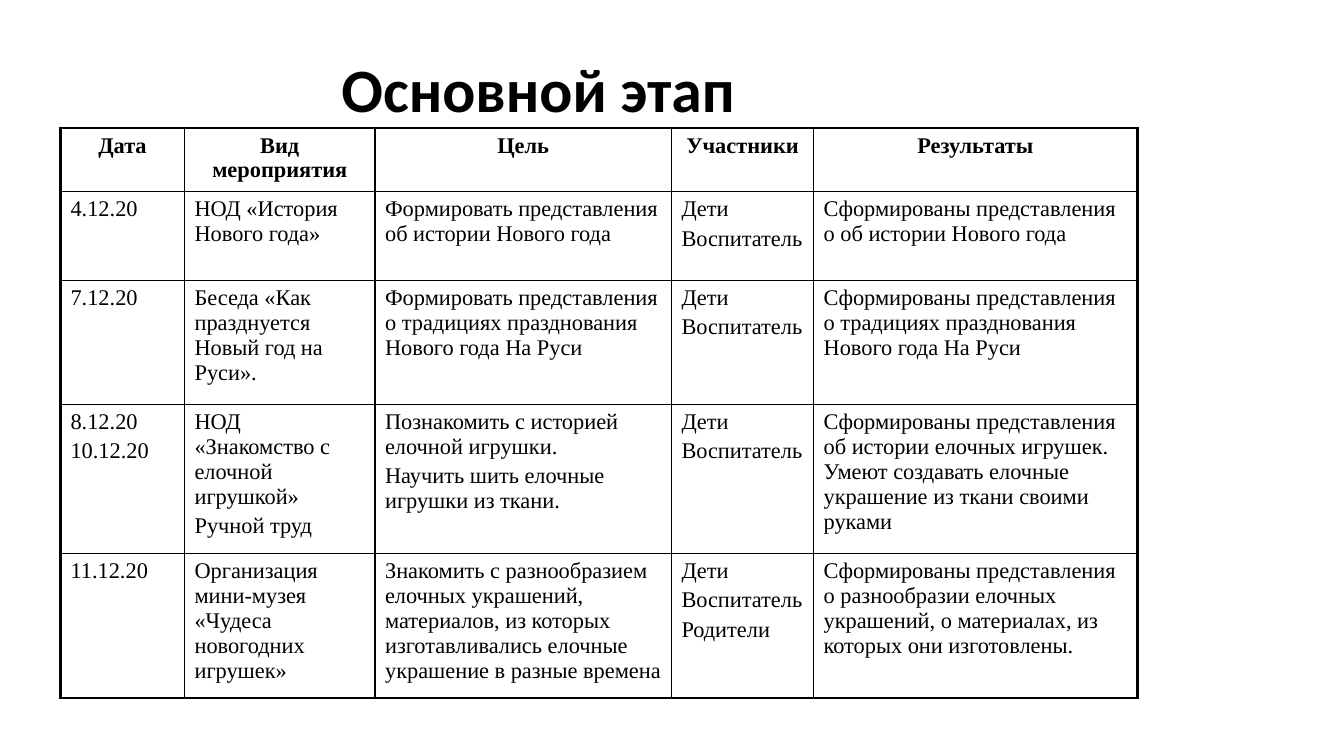
from lxml.etree import SubElement
from pptx import Presentation
from pptx.dml.color import RGBColor
from pptx.enum.text import MSO_ANCHOR, PP_ALIGN
from pptx.oxml.ns import qn
from pptx.util import Inches, Pt

BLACK = RGBColor(0x00, 0x00, 0x00)
THIN, THICK = 1, 2.25
COL_WIDTHS = [1.23, 1.89, 2.94, 1.41, 3.21]
ROW_HEIGHTS = [0.63, 0.88, 1.23, 1.38, 1.34]
ADULTS = "Дети\nВоспитатель"
STAGE_ROWS = [
    ["Дата", "Вид мероприятия", "Цель", "Участники", "Результаты"],
    ["4.12.20", "НОД «История Нового года»",
     "Формировать представления об истории Нового года", ADULTS,
     "Сформированы представления о об истории Нового года"],
    ["7.12.20", "Беседа «Как празднуется Новый год на Руси».",
     "Формировать представления о традициях празднования Нового года На Руси", ADULTS,
     "Сформированы представления о традициях празднования Нового года На Руси"],
    ["8.12.20\n10.12.20", "НОД «Знакомство с елочной игрушкой»\nРучной труд",
     "Познакомить с историей елочной игрушки.\nНаучить шить елочные игрушки из ткани.", ADULTS,
     "Сформированы представления об истории елочных игрушек. "
     "Умеют создавать елочные украшение из ткани своими руками"],
    ["11.12.20", "Организация мини-музея «Чудеса новогодних игрушек»",
     "Знакомить с разнообразием елочных украшений, материалов, из которых "
     "изготавливались елочные украшение в разные времена", ADULTS + "\nРодители",
     "Сформированы представления о разнообразии елочных украшений, "
     "о материалах, из которых они изготовлены."],
]


class SlideBuilder:
    """Holds the text style and the slide, and adds its title and table."""

    def __init__(self, slide):
        self.slide = slide
        self.color = BLACK
        self.title_font, self.title_size = "Calibri", 44
        self.body_font, self.body_size = "Times New Roman", 16

    def style(self, p, name, size, bold, align):
        p.alignment = align
        for r in p.runs:
            r.font.name = name
            r.font.size = Pt(size)
            r.font.bold = bold
            r.font.color.rgb = self.color

    def title(self, text, left, top, width, height):
        sp = self.slide.shapes.add_textbox(Inches(left), Inches(top), Inches(width), Inches(height))
        tf = sp.text_frame
        tf.word_wrap = True
        tf.vertical_anchor = MSO_ANCHOR.MIDDLE
        tf.text = text
        p = tf.paragraphs[0]
        p.line_spacing = 0.9
        self.style(p, self.title_font, self.title_size, True, PP_ALIGN.CENTER)

    def borders(self, cell, widths):
        tc_pr = cell._tc.get_or_add_tcPr()
        for side, width in widths.items():
            ln = SubElement(tc_pr, qn(f"a:ln{side}"), w=str(Pt(width)))
            fill = SubElement(ln, qn("a:solidFill"))
            SubElement(fill, qn("a:srgbClr"), val=str(self.color))

    def cell(self, cell, text, header):
        cell.fill.background()
        cell.text = text
        align = PP_ALIGN.CENTER if header else PP_ALIGN.LEFT
        for i, p in enumerate(cell.text_frame.paragraphs):
            p.space_before = Pt(0.2 * self.body_size if i else 0)
            self.style(p, self.body_font, self.body_size, header, align)

    def table(self, rows, left, top, col_widths, row_heights):
        frame = self.slide.shapes.add_table(
            len(rows), len(col_widths), Inches(left), Inches(top),
            Inches(sum(col_widths)), Inches(sum(row_heights)))
        table = frame.table
        table.first_row = table.horz_banding = False
        for col, width in zip(table.columns, col_widths):
            col.width = Inches(width)
        for row, height in zip(table.rows, row_heights):
            row.height = Inches(height)
        last_row, last_col = len(rows) - 1, len(col_widths) - 1
        for i, row in enumerate(rows):
            for j, text in enumerate(row):
                outer = {"L": j == 0, "R": j == last_col, "T": i == 0, "B": i == last_row}
                cell = table.cell(i, j)
                self.borders(cell, {side: THICK if edge else THIN for side, edge in outer.items()})
                self.cell(cell, text, header=i == 0)


def main():
    prs = Presentation()
    prs.slide_width, prs.slide_height = Inches(13.33), Inches(7.5)
    s = SlideBuilder(prs.slides.add_slide(prs.slide_layouts[6]))
    s.title("Основной этап", 0.6, 0.28, 9.48, 1.28)
    s.table(STAGE_ROWS, 0.6, 1.27, COL_WIDTHS, ROW_HEIGHTS)
    prs.save("out.pptx")


if __name__ == "__main__":
    main()
